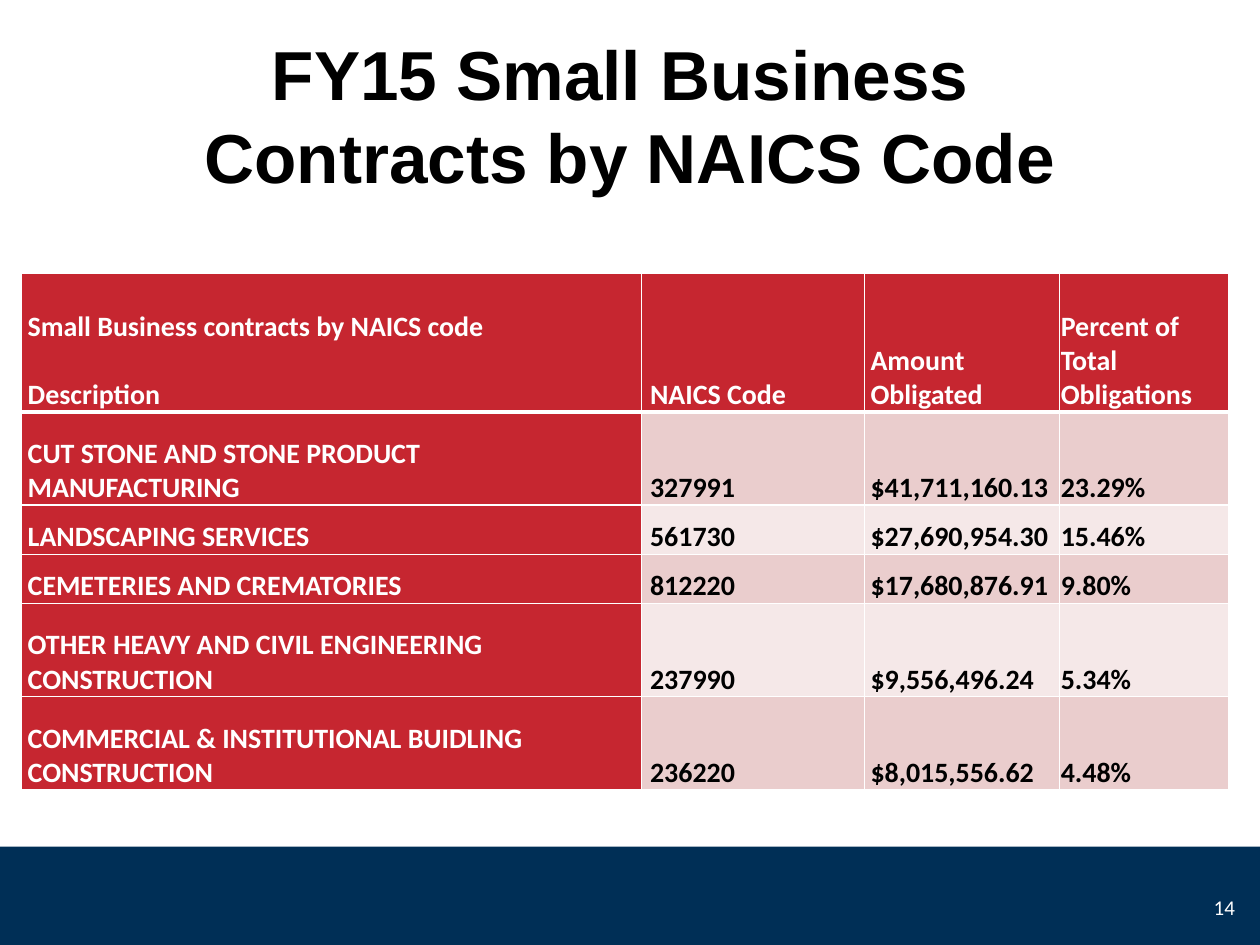
from lxml import etree
from pptx import Presentation
from pptx import util as u
from pptx.dml.color import RGBColor
from pptx.enum import shapes, text
from pptx.oxml.ns import qn

HUES = {"red": "C62630", "rose": "EACDCD", "pale": "F5E8E8",
        "navy": "002F56", "white": "FFFFFF", "black": "000000"}
WIDE, HIGH = 10, 7.5
COLS = [4.92, 1.77, 1.55, 1.34]
ROWS = [1.1, 0.74, 0.39, 0.39, 0.74, 0.74]
PADS = [0.05, 0.07, 0.05, 0.01]
HEAD = [["Small Business contracts by NAICS code", "Description"],
        ["NAICS Code"], ["Amount Obligated"], ["Percent of Total Obligations"]]
BODY = [
    ("CUT STONE AND STONE PRODUCT MANUFACTURING", "327991", "$41,711,160.13", "23.29%"),
    ("LANDSCAPING SERVICES", "561730", "$27,690,954.30", "15.46%"),
    ("CEMETERIES AND CREMATORIES", "812220", "$17,680,876.91", "9.80%"),
    ("OTHER HEAVY AND CIVIL ENGINEERING CONSTRUCTION", "237990", "$9,556,496.24", "5.34%"),
    ("COMMERCIAL & INSTITUTIONAL BUIDLING CONSTRUCTION", "236220", "$8,015,556.62", "4.48%"),
]


def hue(name):
    return RGBColor.from_string(HUES[name])


def place(box):
    return [u.Inches(side) for side in box]


def add_run(para, words, size, color, font="Calibri", bold=False):
    run = para.add_run()
    run.text = words
    run.font.size = u.Pt(size)
    run.font.name = font
    run.font.bold = bold
    run.font.color.rgb = hue(color)


def add_box(slide, box, align):
    frame = slide.shapes.add_textbox(*place(box)).text_frame
    frame.word_wrap = True
    frame.vertical_anchor = text.MSO_ANCHOR.MIDDLE
    para = frame.paragraphs[0]
    para.alignment = align
    return para


def add_title(slide, box):
    para = add_box(slide, box, text.PP_ALIGN.CENTER)
    add_run(para, "FY15 Small Business ", 39.6, "black", "Arial", True)
    para.add_line_break()
    add_run(para, "Contracts by NAICS Code", 39.6, "black", "Arial", True)


def add_edges(cell, row):
    props = cell._tc.get_or_add_tcPr()
    thick = {"T": 3 if row == 1 else 1, "B": 3 if row == 0 else 1}
    for spot, side in enumerate("LRTB"):
        line = etree.Element(qn("a:ln" + side), w=str(u.Pt(thick.get(side, 1))))
        fill = etree.SubElement(line, qn("a:solidFill"))
        etree.SubElement(fill, qn("a:srgbClr"), val=HUES["white"])
        props.insert(spot, line)


def fill_cell(cell, row, col, lines):
    red = row == 0 or col == 0
    band = "rose" if row % 2 else "pale"
    cell.fill.solid()
    cell.fill.fore_color.rgb = hue("red" if red else band)
    cell.vertical_anchor = text.MSO_ANCHOR.BOTTOM
    cell.margin_left = cell.margin_right = u.Inches(PADS[col])
    cell.margin_top, cell.margin_bottom = u.Inches(0.01), 0
    for spot, words in enumerate(lines):
        frame = cell.text_frame
        para = frame.add_paragraph() if spot else frame.paragraphs[0]
        if spot:
            para.space_before = u.Pt(19.5)
        add_run(para, words, 16, "white" if red else "black", bold=True)
    add_edges(cell, row)


def add_grid(slide, box):
    grid = slide.shapes.add_table(len(ROWS), len(COLS), *place(box)).table
    for col, share in zip(grid.columns, COLS):
        col.width = u.Inches(box[2] * share / sum(COLS))
    for row, share in zip(grid.rows, ROWS):
        row.height = u.Inches(box[3] * share / sum(ROWS))
    data = [HEAD] + [[[words] for words in row] for row in BODY]
    for r, row in enumerate(data):
        for c, lines in enumerate(row):
            fill_cell(grid.cell(r, c), r, c, lines)


def add_foot(slide, box):
    left, top, wide, high = box
    bar = slide.shapes.add_shape(shapes.MSO_SHAPE.RECTANGLE, *place(box))
    bar.shadow.inherit = False
    bar.fill.solid()
    bar.fill.fore_color.rgb = hue("navy")
    bar.line.fill.background()
    spot = (left + wide * 0.76, top + high * 0.36, wide * 0.23, high * 0.5)
    add_run(add_box(slide, spot, text.PP_ALIGN.RIGHT), "14", 12, "white")


def main():
    deck = Presentation()
    deck.slide_width, deck.slide_height = u.Inches(WIDE), u.Inches(HIGH)
    slide = deck.slides.add_slide(deck.slide_layouts[6])
    add_foot(slide, (0, 6.72, WIDE, HIGH - 6.72))
    add_title(slide, (0.43, 0.24, 9.14, 1.34))
    add_grid(slide, (0.17, 2.17, sum(COLS), sum(ROWS)))
    deck.save("out.pptx")


if __name__ == "__main__":
    main()
